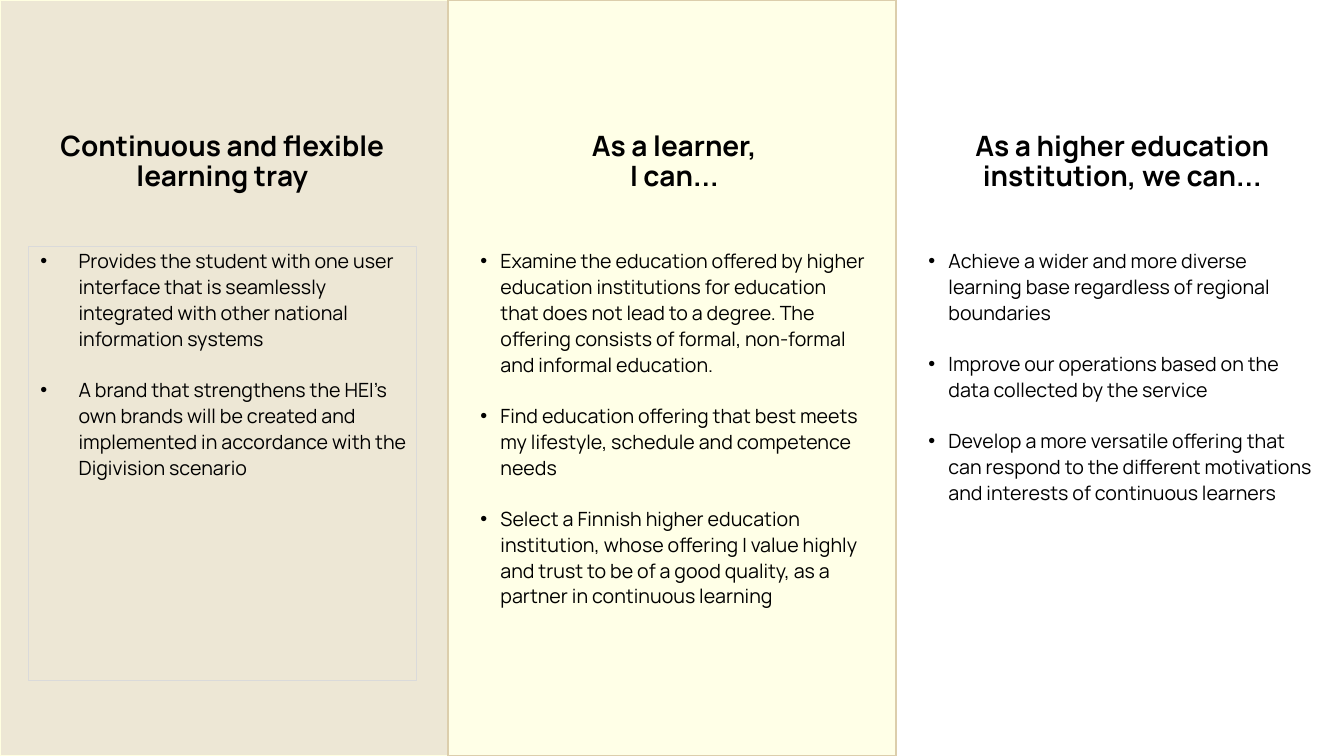
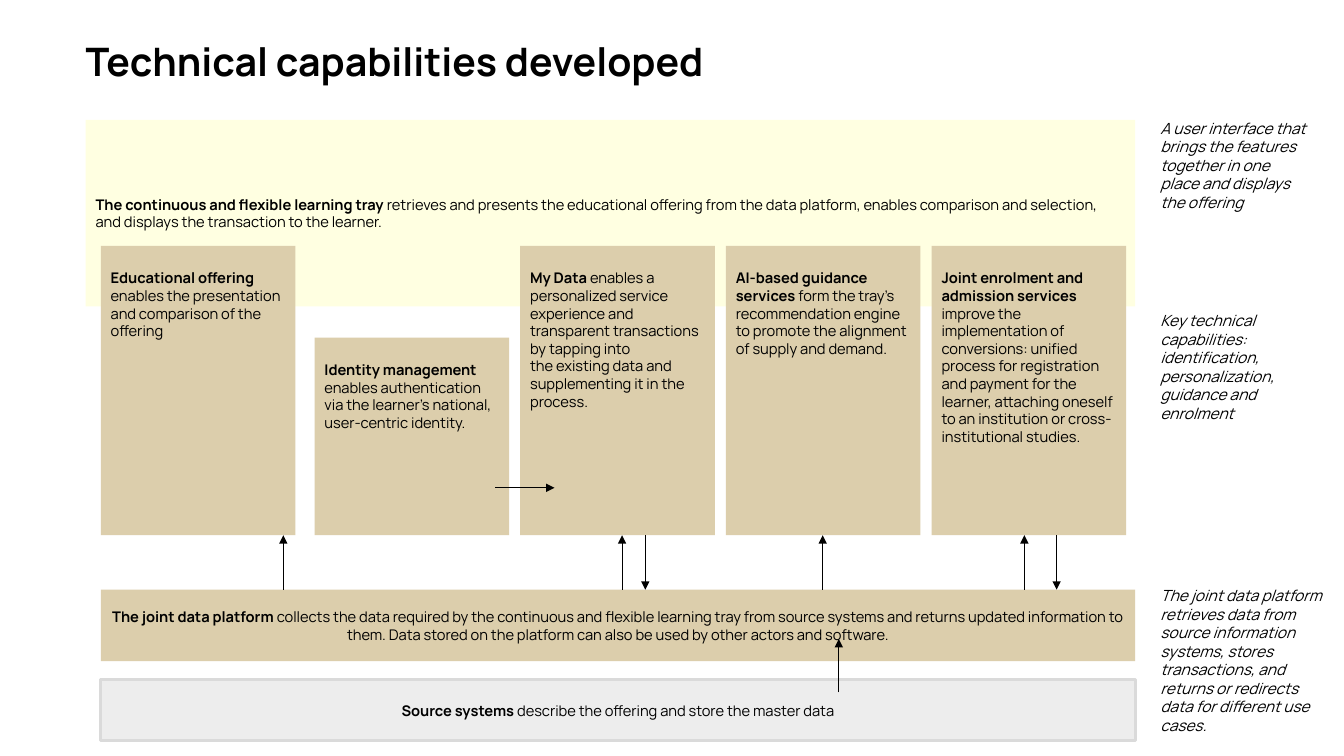
from lxml.etree import SubElement as Sub
from pptx import Presentation
from pptx.dml.color import RGBColor as Rgb
from pptx.enum.shapes import MSO_CONNECTOR as Link, MSO_SHAPE as Form
from pptx.enum.text import MSO_ANCHOR as Anchor, PP_ALIGN as Align
from pptx.oxml.ns import qn
from pptx.util import Inches, Pt

# Shared look
HUES = {"ink": "000000", "sand": "EDE7D5", "cream": "FFFFE7", "pale": "FFFFE1",
        "tan": "DCCEAC", "mist": "EDEDED", "gray": "DADADA"}
FONT = "Manrope"
WIDE, HIGH = 13.33, 7.5

# Slide 1 grid: three equal columns
COL = WIDE / 3
TEXT_W = 3.85
HEAD_Y, HEAD_H = 1.31, 1.11
LIST_Y, LIST_H = 2.45, 4.3

# Slide 2 grid: cards above two bands
LEFT, RIGHT = 1, 11.26
CARD_W, CARD_GAP, CARD_X = 1.93, 0.11, 3.12
CARD_Y, CARD_END = 2.44, 5.31
BAND_Y = 5.85
INSET = (0.1, 0.05, 0.1, 0.05)
CARD_IN = (0.1, 0.23, 0.1, 0.05)

COLUMNS = [
    (0.28, "Continuous and flexible learning tray", (0.5, -0.38), "gray", [
        "Provides the student with one user interface that is seamlessly "
        "integrated with other national information systems",
        "A brand that strengthens the HEI’s own brands will be created and "
        "implemented in accordance with the Digivision scenario"]),
    (0.32, "As a learner,\nI can...", (0.2, -0.2), None, [
        "Examine the education offered by higher education institutions for "
        "education that does not lead to a degree. The offering consists of "
        "formal, non-formal and informal education.",
        "Find education offering that best meets my lifestyle, schedule and "
        "competence needs",
        "Select a Finnish higher education institution, whose offering I value "
        "highly and trust to be of a good quality, as a partner in continuous "
        "learning"]),
    (0.32, "As a higher education institution, we can...", (0.2, -0.2), None, [
        "Achieve a wider and more diverse learning base regardless of regional "
        "boundaries",
        "Improve our operations based on the data collected by the service",
        "Develop a more versatile offering that can respond to the different "
        "motivations and interests of continuous learners"]),
]

# Each card: top, bold lead, plain rest; a list entry is a paragraph
CARDS = [
    (CARD_Y, [[("Educational offering", "b")],
              [("enables the presentation and comparison of the offering", "")]]),
    (3.35, [[("Identity management ", "b"),
             ("enables authentication via the learner’s national, user-centric "
              "identity.", "")]]),
    (CARD_Y, [[("My Data ", "b"),
               ("enables a personalized service experience and transparent "
                "transactions by tapping into\nthe existing data and "
                "supplementing it in the process.", "")]]),
    (CARD_Y, [[("AI-based guidance services ", "b"),
               ("form the tray’s recommendation engine to promote the alignment "
                "of supply and demand.", "")]]),
    (CARD_Y, [[("Joint enrolment and admission services ", "b"),
               ("improve the implementation of conversions: unified process for "
                "registration and payment for the learner, attaching oneself to "
                "an institution or cross-institutional studies.", "")]]),
]

NOTES = [
    (1.13, 1.66, 1.21, "A user interface that brings the features together in "
     "one place and displays the offering"),
    (3.04, 1.81, 1.21, "Key technical capabilities: identification, "
     "personalization, guidance and enrolment"),
    (5.77, 1.81, 1.58, "The joint data platform retrieves data from source "
     "information systems, stores transactions, and returns or redirects data "
     "for different use cases."),
]

UP = (2.81, 6.17, 8.16, 10.16)
DOWN = (6.4, 10.48)


def hue(name):
    return Rgb.from_string(HUES[name])


def panel(slide, area, fill=None, line=None, width=2):
    """Rectangle with optional fill and outline."""
    shape = slide.shapes.add_shape(Form.RECTANGLE, *map(Inches, area))
    shape.shadow.inherit = False
    if fill:
        shape.fill.solid()
        shape.fill.fore_color.rgb = hue(fill)
    else:
        shape.fill.background()
    if line:
        shape.line.color.rgb = hue(line)
        shape.line.width = Pt(width)
    else:
        shape.line.fill.background()
    return shape


def label(slide, area):
    return slide.shapes.add_textbox(*map(Inches, area))


def bullet(para, left, hang):
    props = para._p.get_or_add_pPr()
    props.set("marL", str(Inches(left)))
    props.set("indent", str(Inches(hang)))
    tint = Sub(props, qn("a:buClr"))
    Sub(tint, qn("a:srgbClr")).set("val", HUES["ink"])
    Sub(props, qn("a:buFont")).set("typeface", "Arial")
    Sub(props, qn("a:buChar")).set("char", "•")


def add_run(para, text, size, style):
    for i, part in enumerate(text.split("\n")):
        if i:
            para.add_line_break()
        run = para.add_run()
        run.text = part
        font = run.font
        font.name, font.size = FONT, Pt(size)
        font.bold, font.italic = "b" in style, "i" in style
        font.color.rgb = hue("ink")


def write(shape, paras, size, inset=(0, 0, 0, 0), align=Align.LEFT,
          anchor=Anchor.TOP, pitch=None, gap=0, dots=None):
    """Fill a shape with paragraphs, each a list of (text, style) runs."""
    frame = shape.text_frame
    frame.word_wrap = True
    frame.vertical_anchor = anchor
    (frame.margin_left, frame.margin_top,
     frame.margin_right, frame.margin_bottom) = map(Inches, inset)
    for i, runs in enumerate(paras):
        para = frame.add_paragraph() if i else frame.paragraphs[0]
        if dots:
            bullet(para, *dots)
        para.alignment = align
        if pitch:
            para.line_spacing = pitch
        if i and gap:
            para.space_before = Pt(gap)
        for text, style in runs:
            add_run(para, text, size, style)


def title(slide, area, text, size, align=Align.LEFT):
    write(label(slide, area), [[(text, "b")]], size, align=align, pitch=0.9)


def band(slide, area, lead, rest, fill, line=None, align=Align.CENTER):
    write(panel(slide, area, fill, line), [[(lead, "b"), (rest, "")]], 10.5,
          INSET, align, Anchor.MIDDLE)


def arrow(slide, x, y, end_x, end_y):
    link = slide.shapes.add_connector(
        Link.STRAIGHT, *map(Inches, (x, y, end_x, end_y)))
    link.line.color.rgb = hue("ink")
    link.line.width = Pt(0.75)
    Sub(link.line._get_or_add_ln(), qn("a:tailEnd")).set("type", "triangle")
    Sub(link._element.spPr, qn("a:effectLst"))


def goals(slide):
    # Column backgrounds
    panel(slide, (0, 0, COL, HIGH), "sand", "pale")
    panel(slide, (COL, 0, COL, HIGH), "cream", "tan")
    # Headings and lists
    for i, (pad, head, dots, edge, items) in enumerate(COLUMNS):
        x = i * COL + pad
        title(slide, (x, HEAD_Y, TEXT_W, HEAD_H), head, 20, Align.CENTER)
        area = (x, LIST_Y, TEXT_W, LIST_H)
        body = panel(slide, area, line=edge, width=0.75) if edge else label(slide, area)
        write(body, [[(item, "")] for item in items], 14,
              pitch=1.1, gap=18, dots=dots)


def skills(slide):
    title(slide, (0.85, 0.42, 11.04, 1.03), "Technical capabilities developed", 28)
    # Bands
    span = RIGHT - LEFT
    band(slide, (0.85, 1.19, RIGHT - 0.85, 1.85),
         "The continuous and flexible learning tray ",
         "retrieves and presents the educational offering from the data platform, "
         "enables comparison and selection, and displays the transaction to the "
         "learner.", "pale", align=Align.LEFT)
    band(slide, (LEFT, BAND_Y, span, 0.71), "The joint data platform",
         " collects the data required by the continuous and flexible learning tray "
         "from source systems and returns updated information to them. Data stored "
         "on the platform can also be used by other actors and software.", "tan")
    band(slide, (LEFT, 6.74, span, 0.61), "Source systems",
         " describe the offering and store the master data", "mist", "gray")
    # Cards
    for i, (top, paras) in enumerate(CARDS):
        x = CARD_X + (i - 1) * (CARD_W + CARD_GAP) if i else LEFT
        card = panel(slide, (x, top, CARD_W, CARD_END - top), "tan")
        write(card, paras, 10.5, CARD_IN)
    # Data flows
    for x in UP:
        arrow(slide, x, BAND_Y, x, CARD_END)
    for x in DOWN:
        arrow(slide, x, CARD_END, x, BAND_Y)
    arrow(slide, 4.91, 4.84, 5.5, 4.84)
    arrow(slide, 8.32, 6.87, 8.32, 6.34)
    # Side notes
    for top, wide, high, text in NOTES:
        write(label(slide, (11.41, top, wide, high)), [[(text, "i")]], 11, INSET)


def main():
    deck = Presentation()
    deck.slide_width, deck.slide_height = Inches(WIDE), Inches(HIGH)
    for draw in (goals, skills):
        draw(deck.slides.add_slide(deck.slide_layouts[6]))
    deck.save("out.pptx")


if __name__ == "__main__":
    main()
